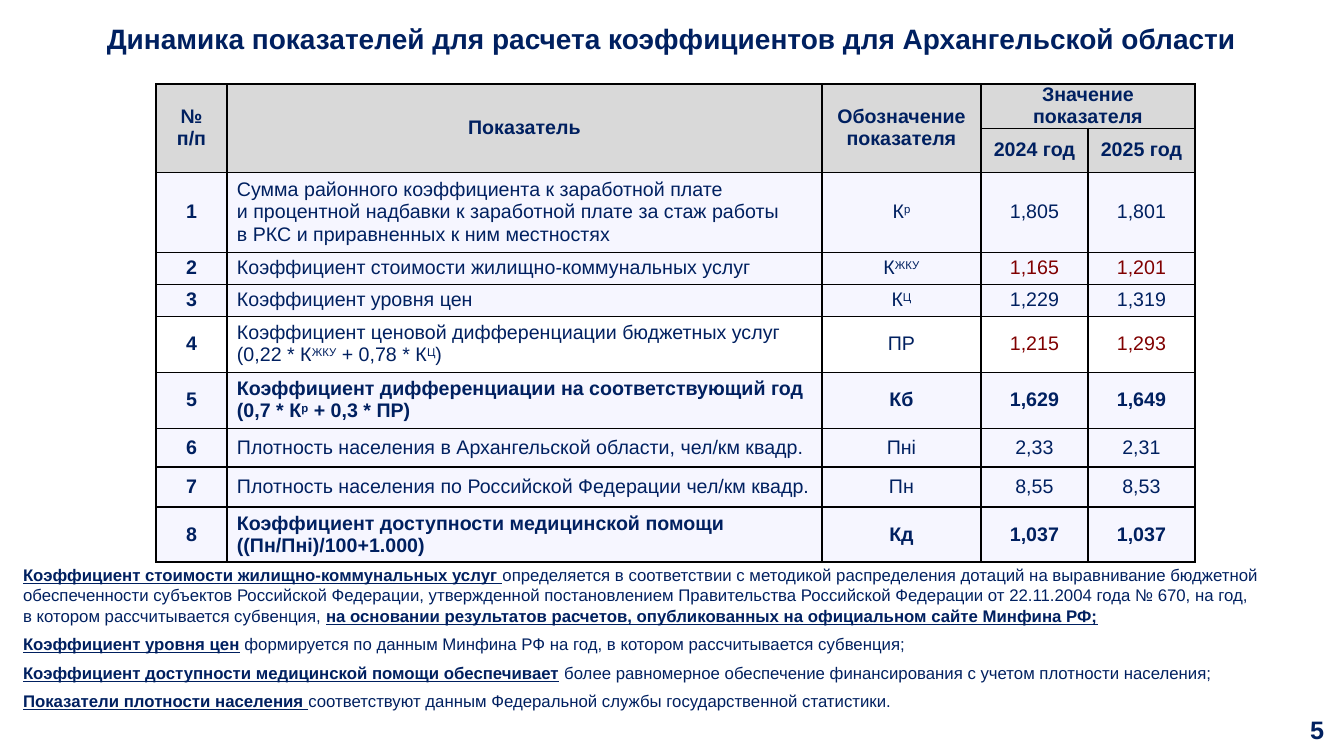
from lxml import etree
from pptx import Presentation
from pptx.dml.color import RGBColor
from pptx.enum.text import MSO_ANCHOR, MSO_AUTO_SIZE, PP_ALIGN
from pptx.oxml.ns import qn
from pptx.util import Emu, Pt

LEFT, CENTER, RIGHT = PP_ALIGN.LEFT, PP_ALIGN.CENTER, PP_ALIGN.RIGHT
MIDDLE, TOP = MSO_ANCHOR.MIDDLE, MSO_ANCHOR.TOP
NO_FIT = MSO_AUTO_SIZE.NONE
COLORS = {"navy": "002060", "red": "800000", "line": "000000",
          "head": "D9D9D9", "tint": "F6F6FF", "plain": "FFFFFF"}
FONT = "Arial"

COLUMNS = [71, 595, 159, 107, 107]
ROWS = [44, 44, 80, 32, 32, 56, 56, 39, 40, 55]
HEADINGS = ["№ п/п", "Показатель", "Обозначение показателя"]
YEARS = ["2024 год", "2025 год"]
INDICATORS = [
    ("Сумма районного коэффициента к заработной плате\n"
     "и процентной надбавки к заработной плате за стаж работы\n"
     "в РКС и приравненных к ним местностях", "К^р^", "1,805", "1,801"),
    ("Коэффициент стоимости жилищно-коммунальных услуг", "К^ЖКУ^", "1,165", "1,201"),
    ("Коэффициент уровня цен", "К^Ц^", "1,229", "1,319"),
    ("Коэффициент ценовой дифференциации бюджетных услуг (0,22 * К^ЖКУ^ + 0,78 * К^Ц^)",
     "ПР", "1,215", "1,293"),
    ("Коэффициент дифференциации на соответствующий год (0,7 * К^р^ + 0,3 * ПР)",
     "Кб", "1,629", "1,649"),
    ("Плотность населения в Архангельской области, чел/км квадр.", "Пнi", "2,33", "2,31"),
    ("Плотность населения по Российской Федерации чел/км квадр.", "Пн", "8,55", "8,53"),
    ("Коэффициент доступности медицинской помощи\n((Пн/Пнi)/100+1.000)",
     "Кд", "1,037", "1,037"),
]
BOLD_ROWS, RED_ROWS, PLAIN_ROWS = {5, 8}, {2, 4}, {4}
NOTES = [
    "|Коэффициент стоимости жилищно-коммунальных услуг |определяется в соответствии с "
    "методикой распределения дотаций на выравнивание бюджетной обеспеченности субъектов "
    "Российской Федерации, утвержденной постановлением Правительства Российской Федерации "
    "от 22.11.2004 года № 670, на год, \vв котором рассчитывается субвенция, "
    "|на основании результатов расчетов, опубликованных на официальном сайте Минфина РФ;|",
    "|Коэффициент уровня цен| формируется по данным Минфина РФ на год, "
    "в котором рассчитывается субвенция;",
    "|Коэффициент доступности медицинской помощи обеспечивает| более равномерное "
    "обеспечение финансирования с учетом плотности населения;",
    "|Показатели плотности населения |соответствуют данным Федеральной службы "
    "государственной статистики.",
]


def px(n):
    """Turn slide pixels into EMU."""
    return Emu(round(n * 914400 / 100.8))


def place(sp, box):
    """Move a shape to a box of left, top, width, height."""
    sp.left, sp.top, sp.width, sp.height = map(px, box)


def add_run(p, text, size, color, bold, underline=False, raised=False):
    """Add one formatted run."""
    r = p.add_run()
    r.text = text
    f = r.font
    f.name, f.size, f.bold, f.underline = FONT, Pt(size), bold, underline
    f.color.rgb = RGBColor.from_string(COLORS[color])
    if raised:
        r._r.get_or_add_rPr().set("baseline", "30000")


def write(tf, text, size=14, color="navy", bold=False, align=LEFT, anchor=MIDDLE,
          spacing=1.0, after=0, bullets=True):
    """Fill a frame: newline splits paragraphs, ^ raises, | stresses, \\v breaks a line."""
    tf.word_wrap, tf.vertical_anchor = True, anchor
    for i, line in enumerate(text.split("\n")):
        p = tf.paragraphs[0] if i == 0 else tf.add_paragraph()
        p.alignment, p.line_spacing = align, spacing
        p.space_before, p.space_after = Pt(0), Pt(after)
        if not bullets:
            pPr = p._p.get_or_add_pPr()
            pPr.set("marL", "0")
            pPr.set("indent", "0")
            etree.SubElement(pPr, qn("a:buNone"))
        for j, part in enumerate(line.split("|")):
            stressed = j % 2 == 1
            for k, piece in enumerate(part.split("^")):
                for m, bit in enumerate(piece.split("\v")):
                    if m:
                        p.add_line_break()
                    if bit:
                        add_run(p, bit, size, color, bold or stressed, stressed, k % 2 == 1)


def border(cell):
    """Draw thin lines on all four sides of a cell."""
    tcPr = cell._tc.get_or_add_tcPr()
    for side in ("lnL", "lnR", "lnT", "lnB"):
        ln = etree.SubElement(tcPr, qn(f"a:{side}"), w=str(Pt(1)))
        fill = etree.SubElement(ln, qn("a:solidFill"))
        etree.SubElement(fill, qn("a:srgbClr"), val=COLORS["line"])


def fill_cell(cell, text, **fmt):
    """Write a cell with the margins shared by the table."""
    cell.margin_left = cell.margin_right = px(10)
    cell.margin_top = cell.margin_bottom = 0
    cell.vertical_anchor = MIDDLE
    write(cell.text_frame, text, **fmt)


def add_title(slide, box, text):
    """Put the heading in the title placeholder."""
    sp = slide.shapes.title
    place(sp, box)
    tf = sp.text_frame
    tf.auto_size = NO_FIT
    tf.margin_left = tf.margin_right = tf.margin_top = tf.margin_bottom = 0
    write(tf, text, size=20, bold=True, align=CENTER, spacing=0.92)


def add_indicators(slide, left, top):
    """Build the table of indicators from its top left corner."""
    frame = slide.shapes.add_table(len(ROWS), len(COLUMNS), px(left), px(top),
                                   px(sum(COLUMNS)), px(sum(ROWS)))
    table = frame.table
    for col, width in zip(table.columns, COLUMNS):
        col.width = px(width)
    for i, (row, height) in enumerate(zip(table.rows, ROWS)):
        row.height = px(height)
        shade = "head" if i < 2 else "plain" if i - 1 in PLAIN_ROWS else "tint"
        for cell in row.cells:
            border(cell)
            cell.fill.solid()
            cell.fill.fore_color.rgb = RGBColor.from_string(COLORS[shade])
    head = {"bold": True, "align": CENTER}
    for c, text in enumerate(HEADINGS):
        table.cell(0, c).merge(table.cell(1, c))
        fill_cell(table.cell(0, c), text, **head)
    table.cell(0, 3).merge(table.cell(0, 4))
    fill_cell(table.cell(0, 3), "Значение показателя", **head)
    for c, text in enumerate(YEARS, 3):
        fill_cell(table.cell(1, c), text, **head)
    for n, record in enumerate(INDICATORS, 1):
        for c, text in enumerate((str(n), *record)):
            fill_cell(table.cell(n + 1, c), text, bold=c == 0 or n in BOLD_ROWS,
                      align=LEFT if c == 1 else CENTER,
                      color="red" if c > 2 and n in RED_ROWS else "navy")


def add_notes_text(slide, box, notes):
    """Put the explanations in the body placeholder."""
    sp = slide.placeholders[1]
    place(sp, box)
    tf = sp.text_frame
    tf.auto_size = NO_FIT
    tf.margin_left = tf.margin_right = px(10)
    tf.margin_top = tf.margin_bottom = px(5)
    write(tf, "\n".join(notes), size=12, anchor=TOP, after=6, bullets=False)


def add_page_number(slide, box, text):
    """Place the page number in the bottom right corner."""
    sp = slide.shapes.add_textbox(*map(px, box))
    write(sp.text_frame, text, size=18, bold=True, align=RIGHT)


def main():
    """Build the slide and save it."""
    prs = Presentation()
    prs.slide_width, prs.slide_height = px(1344), px(756)
    slide = prs.slides.add_slide(prs.slide_layouts[1])
    add_title(slide, (60, 21, 1223, 39),
              "Динамика показателей для расчета коэффициентов для Архангельской области")
    add_indicators(slide, 156, 84)
    add_notes_text(slide, (13, 560, 1331, 174), NOTES)
    add_page_number(slide, (1021, 704, 313, 50), "5")
    prs.save("out.pptx")


if __name__ == "__main__":
    main()
